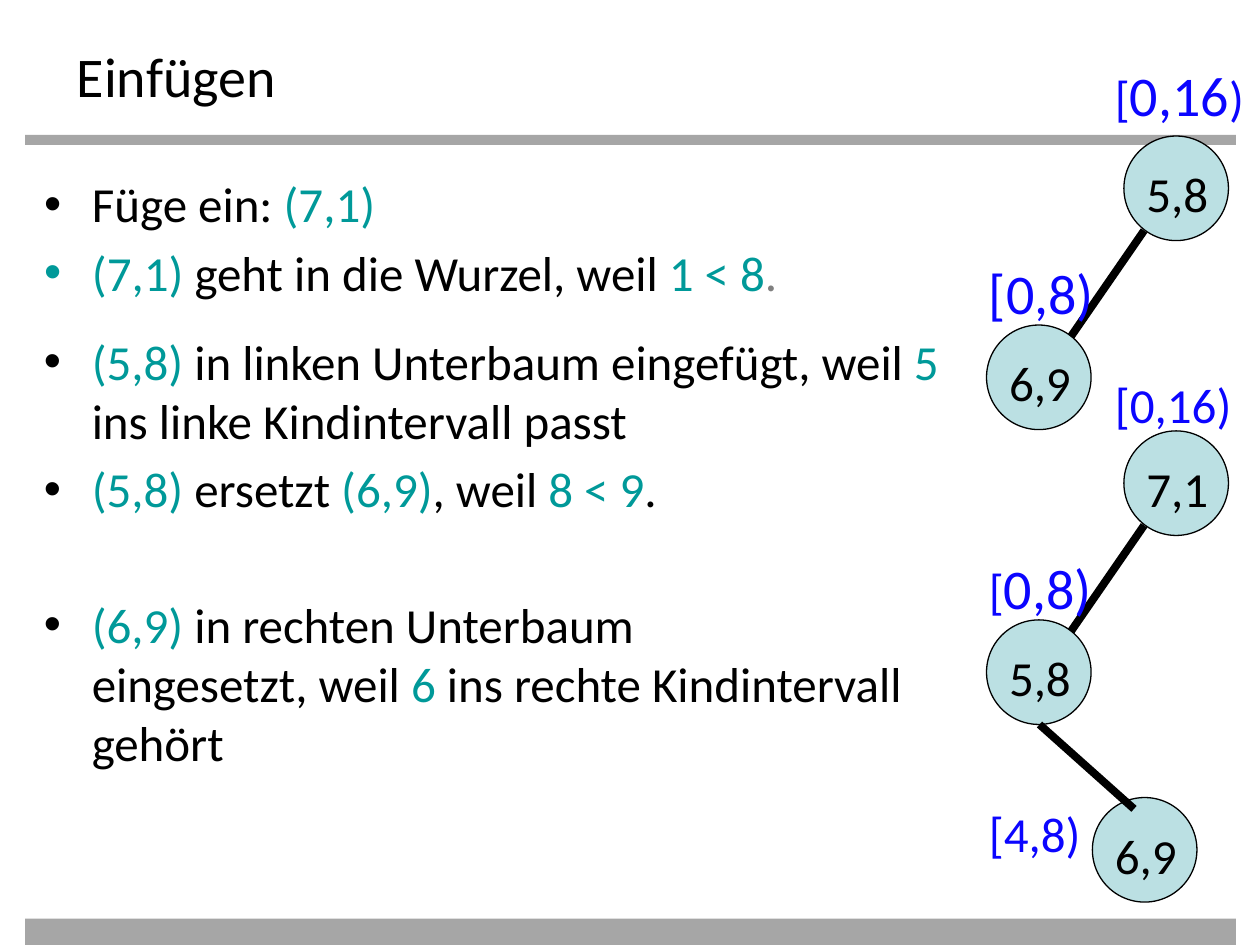
from dataclasses import dataclass

from lxml.etree import SubElement
from pptx import Presentation
from pptx.dml.color import RGBColor
from pptx.enum.shapes import MSO_CONNECTOR as Connector, MSO_SHAPE as Shape
from pptx.enum.text import MSO_ANCHOR as Anchor, MSO_AUTO_SIZE as AutoSize, PP_ALIGN as Align
from pptx.oxml.ns import qn
from pptx.util import Inches, Pt


@dataclass(frozen=True)
class Theme:
    font: str = "Calibri"
    black: str = "000000"
    bar: str = "A6A6A6"
    grey: str = "808080"
    pair: str = "009999"
    interval: str = "0B05FF"
    node: str = "BBE0E3"
    large: int = 32
    normal: int = 28


THEME = Theme()
NODE_SIZE = 0.83


def box(left, top, width, height):
    return [Inches(value) for value in (left, top, width, height)]


def add_runs(paragraph, runs):
    """Add (text, colour, size) runs; a newline in a text is a line break."""
    for text, color, size in runs:
        for index, line in enumerate(text.split("\n")):
            if index:
                paragraph.add_line_break()
            run = paragraph.add_run()
            run.text = line
            run.font.name = THEME.font
            run.font.size = Pt(size)
            run.font.color.rgb = RGBColor.from_string(color)


def add_text(slide, left, top, width, height, runs):
    text_frame = slide.shapes.add_textbox(*box(left, top, width, height)).text_frame
    text_frame.word_wrap = True
    add_runs(text_frame.paragraphs[0], runs)


def add_shape(slide, kind, left, top, width, height, fill):
    shape = slide.shapes.add_shape(kind, *box(left, top, width, height))
    shape.shadow.inherit = False
    shape.fill.solid()
    shape.fill.fore_color.rgb = RGBColor.from_string(fill)
    return shape


def add_bars(slide):
    for top, height in ((1.07, 0.08), (7.29, 0.21)):
        bar = add_shape(slide, Shape.RECTANGLE, 0.2, top, 9.61, height, THEME.bar)
        bar.line.fill.background()


def add_title(slide, left, top, width, height, text):
    title = slide.shapes.title
    title.left, title.top, title.width, title.height = box(left, top, width, height)
    text_frame = title.text_frame
    text_frame.auto_size = AutoSize.NONE
    text_frame.vertical_anchor = Anchor.TOP
    paragraph = text_frame.paragraphs[0]
    paragraph.alignment = Align.LEFT
    add_runs(paragraph, [(text, THEME.black, THEME.large)])


def add_bullets(shape, left, top, width, height, items, bullet_color=None):
    """Fill a shape with bulleted items, each a list of (text, colour) runs."""
    shape.left, shape.top, shape.width, shape.height = box(left, top, width, height)
    text_frame = shape.text_frame
    text_frame.word_wrap = True
    text_frame.auto_size = AutoSize.NONE
    for index, item in enumerate(items):
        paragraph = text_frame.add_paragraph() if index else text_frame.paragraphs[0]
        paragraph.space_before = Pt(0.2 * THEME.normal if index else 0)
        properties = paragraph._p.get_or_add_pPr()
        properties.set("marL", str(Inches(0.38)))
        properties.set("indent", str(-Inches(0.38)))
        if bullet_color:
            color = SubElement(properties, qn("a:buClr"))
            SubElement(color, qn("a:srgbClr"), val=bullet_color)
        SubElement(properties, qn("a:buFont"), typeface="Arial")
        SubElement(properties, qn("a:buChar"), char="•")
        add_runs(paragraph, [(text, color, THEME.normal) for text, color in item])


def add_node(slide, left, top, key):
    circle = add_shape(slide, Shape.OVAL, left, top, NODE_SIZE, NODE_SIZE, THEME.node)
    circle.line.color.rgb = RGBColor.from_string(THEME.black)
    circle.line.width = Pt(0.75)
    add_text(slide, left + 0.08, top + 0.17, 0.75, 0.57,
             [(key, THEME.black, THEME.normal)])


def add_edge(slide, start_x, start_y, end_x, end_y):
    edge = slide.shapes.add_connector(
        Connector.STRAIGHT, *box(start_x, start_y, end_x, end_y))
    edge.line.color.rgb = RGBColor.from_string(THEME.black)
    edge.line.width = Pt(4.5)
    SubElement(edge._element.spPr, qn("a:effectLst"))


def add_interval(slide, left, top, parts):
    height = 0.64 if any(size == THEME.large for _, size in parts) else 0.57
    add_text(slide, left, top, 1.25, height,
             [(text, THEME.interval, size) for text, size in parts])


def add_left_branch(slide, left, top, root, child, root_interval, child_interval, rise):
    """Draw a root with its left child; rise lifts the root interval above the root."""
    add_node(slide, left + 1.17, top, root)
    add_node(slide, left + 0.08, top + 1.5, child)
    add_edge(slide, left + 1.33, top + 0.75, left + 0.75, top + 1.59)
    add_interval(slide, left + 1, top - rise, root_interval)
    add_interval(slide, left, top + 0.92, child_interval)


def add_right_leaf(slide, left, top, key, interval):
    add_node(slide, left + 0.92, top, key)
    add_edge(slide, left + 0.5, top - 0.58, left + 1.25, top + 0.09)
    add_interval(slide, left, top, interval)


def add_steps(slide):
    black, pair = THEME.black, THEME.pair
    insert_root = [
        [("Füge ein: ", black), ("(7,1)", pair)],
        [("(7,1) ", pair), ("geht in die Wurzel, weil ", black),
         ("1 < 8", pair), (".", THEME.grey)],
    ]
    insert_left = [
        [("(5,8) ", pair), ("in linken Unterbaum eingefügt, weil ", black),
         ("5 ", pair), ("ins linke Kindintervall passt", black)],
        [("(5,8) ", pair), ("ersetzt ", black), ("(6,9)", pair),
         (", weil ", black), ("8 < 9", pair), (".", black)],
    ]
    insert_right = [
        [("(6,9) ", pair), ("in rechten Unterbaum\neingesetzt, weil ", black),
         ("6 ", pair), ("ins rechte Kindintervall gehört", black)],
    ]
    left, width = 0.25, 7.58
    add_bullets(slide.placeholders[1], left, 1.33, width, 1.42, insert_root)
    for top, height, items in ((2.58, 1.83, insert_left), (4.67, 1.33, insert_right)):
        text_box = slide.shapes.add_textbox(*box(left, top, width, height))
        add_bullets(text_box, left, top, width, height, items, black)


def add_trees(slide, left):
    normal, large = THEME.normal, THEME.large
    add_left_branch(slide, left, 1.08, "5,8", "6,9",
                    [("[", normal), ("0,16", large), (")", normal)],
                    [("[0,8)", large)], rise=0.65)
    add_left_branch(slide, left, 3.42, "7,1", "5,8",
                    [("[0,16)", normal)],
                    [("[", normal), ("0,8)", large)], rise=0.5)
    add_right_leaf(slide, left, 6.33, "6,9", [("[4,8)", normal)])


def main():
    presentation = Presentation()
    presentation.slide_width, presentation.slide_height = Inches(10), Inches(7.5)
    slide = presentation.slides.add_slide(presentation.slide_layouts[1])
    add_bars(slide)
    add_title(slide, 0.51, 0.28, 9, 0.55, "Einfügen")
    add_trees(slide, 7.75)
    add_steps(slide)
    presentation.save("out.pptx")


if __name__ == "__main__":
    main()
